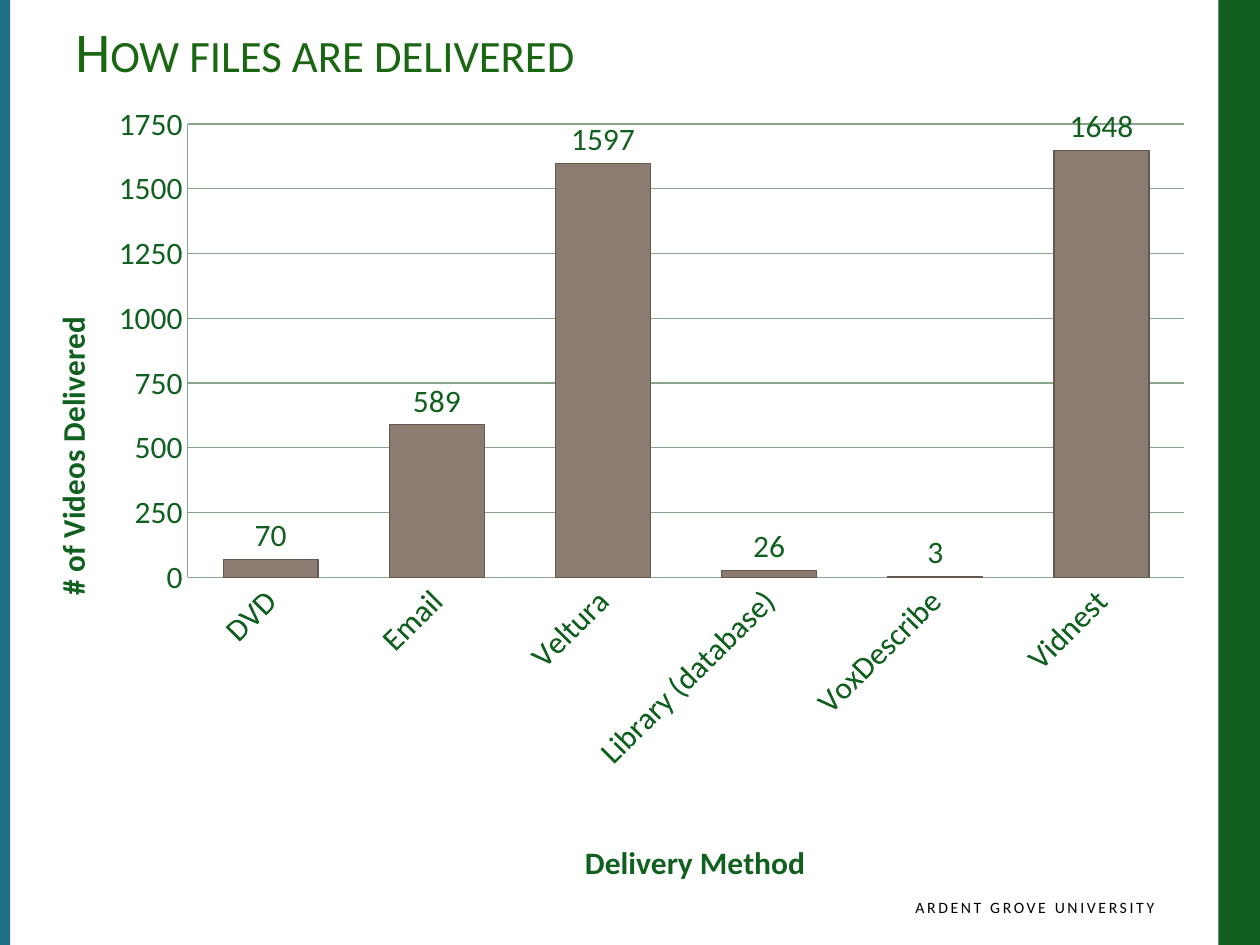
import pptx
import pptx.chart.data
import pptx.dml.color
import pptx.enum.chart
import pptx.enum.shapes
import pptx.enum.text
import pptx.oxml
import pptx.oxml.ns
import pptx.util

Inches = pptx.util.Inches
Pt = pptx.util.Pt
RGBColor = pptx.dml.color.RGBColor
qn = pptx.oxml.ns.qn

GREEN = RGBColor(0x11, 0x60, 0x20)
TEAL = RGBColor(0x1E, 0x6E, 0x86)
TITLE_GREEN = RGBColor(0x1A, 0x66, 0x13)
GRID_GREEN = RGBColor(0x88, 0xA5, 0x8C)
BAR_FILL = RGBColor(0x8C, 0x7B, 0x70)
BAR_EDGE = RGBColor(0x66, 0x58, 0x50)
BLACK = RGBColor(0, 0, 0)
FONT = "Calibri"

DELIVERIES = {
    "DVD": 70,
    "Email": 589,
    "Veltura": 1597,
    "Library (database)": 26,
    "VoxDescribe": 3,
    "Vidnest": 1648,
}


def set_attrs(obj, values):
    for name, value in values.items():
        setattr(obj, name, value)


def set_font(font, size, color, bold=False):
    set_attrs(font, {"name": FONT, "size": Pt(size), "bold": bold})
    font.color.rgb = color


def set_line(line, color, width):
    line.color.rgb = color
    line.width = Pt(width)


def add_band(s, left, width, color):
    sp = s.shapes.add_shape(
        pptx.enum.shapes.MSO_SHAPE.RECTANGLE,
        Inches(left), 0, Inches(width), Inches(7.5))
    sp.shadow.inherit = False
    sp.fill.solid()
    sp.fill.fore_color.rgb = color
    sp.line.fill.background()


def add_text(s, box, text, size, color, frame_format, align, run_attrs):
    sp = s.shapes.add_textbox(*map(Inches, box))
    tf = sp.text_frame
    set_attrs(tf, {
        "word_wrap": True,
        "vertical_anchor": pptx.enum.text.MSO_ANCHOR.TOP,
        **frame_format,
    })
    p = tf.paragraphs[0]
    p.alignment = align
    r = p.add_run()
    r.text = text
    set_font(r.font, size, color)
    for name, value in run_attrs.items():
        r.font._element.set(name, value)


def set_layout(parent, index, **values):
    for old in parent.findall(qn("c:layout")):
        parent.remove(old)
    tags = "".join(f'<c:{name} val="{value}"/>' for name, value in values.items())
    parent.insert(index, pptx.oxml.parse_xml(
        f'<c:layout {pptx.oxml.ns.nsdecls("c")}>'
        f"<c:manualLayout>{tags}</c:manualLayout></c:layout>"))


def rotate_text(element, degrees):
    body = next(element.iter(qn("a:bodyPr")))
    body.set("rot", str(degrees * 60000))
    body.set("vert", "horz")


def format_axis(axis, title, x, y):
    tick = pptx.enum.chart.XL_TICK_MARK.NONE
    set_attrs(axis, {"major_tick_mark": tick, "minor_tick_mark": tick})
    set_font(axis.tick_labels.font, 18, GREEN)
    set_line(axis.format.line, GRID_GREEN, 0.75)
    tf = axis.axis_title.text_frame
    tf.text = title
    set_font(tf.paragraphs[0].runs[0].font, 18, GREEN, bold=True)
    set_layout(axis.axis_title._element, 1, xMode="edge", yMode="edge", x=x, y=y)


def add_delivery_chart(s):
    data = pptx.chart.data.CategoryChartData()
    data.categories = DELIVERIES.keys()
    data.add_series("Series 1", DELIVERIES.values())
    chart = s.shapes.add_chart(
        pptx.enum.chart.XL_CHART_TYPE.COLUMN_CLUSTERED,
        Inches(0.17), Inches(0.83), Inches(9.42), Inches(6.25), data).chart
    set_attrs(chart, {"has_legend": False, "has_title": False})
    set_font(chart.font, 18, GREEN)

    plot = chart.plots[0]
    set_attrs(plot, {"gap_width": 75, "vary_by_categories": False,
                     "has_data_labels": True})
    set_attrs(plot.data_labels, {
        "show_value": True,
        "position": pptx.enum.chart.XL_LABEL_POSITION.OUTSIDE_END,
    })
    set_font(plot.data_labels.font, 18, GREEN)
    bars = plot.series[0].format
    bars.fill.solid()
    bars.fill.fore_color.rgb = BAR_FILL
    set_line(bars.line, BAR_EDGE, 0.75)

    category, value = chart.category_axis, chart.value_axis
    format_axis(category, "Delivery Method", 0.47, 0.94)
    format_axis(value, "# of Videos Delivered", 0.02, 0.27)
    set_attrs(value, {"minimum_scale": 0, "maximum_scale": 1750,
                      "major_unit": 250, "has_major_gridlines": True})
    set_line(value.major_gridlines.format.line, GRID_GREEN, 0.75)
    rotate_text(category._element.find(qn("c:txPr")), -45)
    rotate_text(value.axis_title._element, -90)
    set_layout(next(chart._chartSpace.iter(qn("c:plotArea"))), 0,
               layoutTarget="inner", xMode="edge", yMode="edge",
               x=0.14, y=0.025, w=0.84, h=0.583)


def main():
    prs = pptx.Presentation()
    set_attrs(prs, {"slide_width": Inches(10), "slide_height": Inches(7.5)})
    s = prs.slides.add_slide(prs.slide_layouts[6])
    align = pptx.enum.text.PP_ALIGN
    add_band(s, 9.67, 0.33, GREEN)
    add_band(s, 0, 0.08, TEAL)
    add_text(s, (5.08, 7.08, 4.08, 0.33), "ARDENT GROVE UNIVERSITY", 9, BLACK,
             {"margin_right": 0}, align.RIGHT, {"spc": "150"})
    add_text(s, (0.5, 0.08, 8.1, 1.25), "How files are delivered", 32, TITLE_GREEN,
             {}, align.LEFT, {"cap": "small"})
    add_delivery_chart(s)
    prs.save("out.pptx")


if __name__ == "__main__":
    main()
